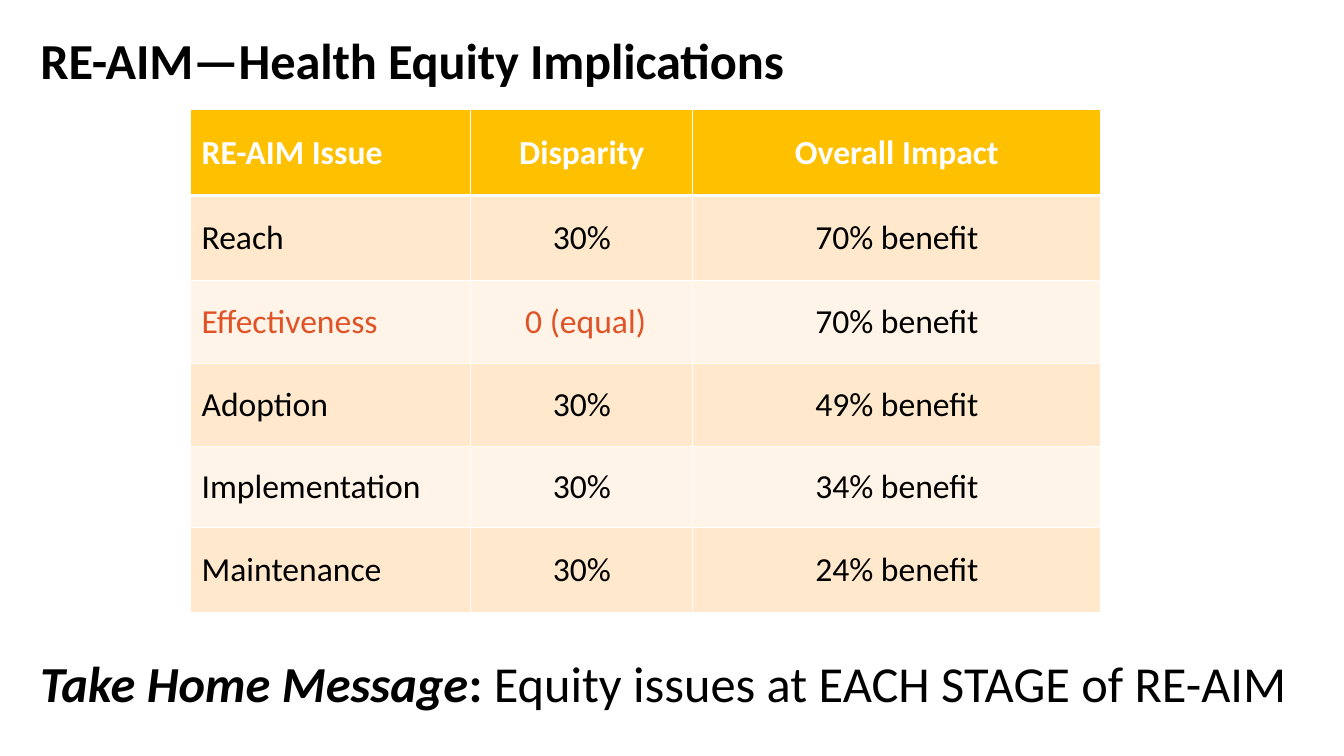
from dataclasses import dataclass

from pptx import Presentation
from pptx import util as u
from pptx.dml.color import RGBColor
from pptx.enum import text as t
from pptx.oxml import parse_xml
from pptx.oxml.ns import nsdecls


@dataclass(frozen=True)
class Theme:
    font: str = "Calibri"
    heading_size: int = 36
    table_size: int = 24
    ink: str = "000000"
    white: str = "FFFFFF"
    accent: str = "DF5327"
    header: str = "FFC000"
    bands: tuple = ("FFE8CC", "FFF4E7")
    border: int = 1
    header_border: int = 3


def add_text(paragraph, content, *, font, size, color, bold=False, italic=False, spacing=None):
    run = paragraph.add_run()
    run.text = content
    run.font.name = font
    run.font.size = u.Pt(size)
    run.font.bold = bold
    run.font.italic = italic
    run.font.color.rgb = RGBColor.from_string(color)
    if spacing is not None:
        run.font._element.set("spc", str(round(spacing * 100)))


class SlideBuilder:
    def __init__(self, slide, theme):
        self.slide = slide
        self.theme = theme

    def title(self, content, box):
        heading = self.slide.shapes.title
        heading.left, heading.top, heading.width, heading.height = map(u.Inches, box)
        frame = heading.text_frame
        frame.word_wrap = True
        frame.auto_size = t.MSO_AUTO_SIZE.NONE
        frame.vertical_anchor = t.MSO_ANCHOR.MIDDLE
        paragraph = frame.paragraphs[0]
        paragraph.alignment = t.PP_ALIGN.LEFT
        paragraph.line_spacing = 0.9
        add_text(paragraph, content, font=self.theme.font, size=self.theme.heading_size,
                 color=self.theme.ink, bold=True, spacing=-0.1)

    def message(self, parts, box):
        frame = self.slide.shapes.add_textbox(*map(u.Inches, box)).text_frame
        frame.word_wrap = True
        frame.auto_size = t.MSO_AUTO_SIZE.SHAPE_TO_FIT_TEXT
        for content, style in parts:
            add_text(frame.paragraphs[0], content, font=self.theme.font,
                     size=self.theme.heading_size, color=self.theme.ink, **style)

    def borders(self, cell, is_header):
        properties = cell._tc.get_or_add_tcPr()
        for index, side in enumerate("LRTB"):
            thick = is_header and side == "B"
            width = u.Pt(self.theme.header_border if thick else self.theme.border)
            properties.insert(index, parse_xml(
                f'<a:ln{side} {nsdecls("a")} w="{width}"><a:solidFill>'
                f'<a:srgbClr val="{self.theme.white}"/></a:solidFill></a:ln{side}>'))

    def cell(self, cell, content, row, column, highlighted):
        theme = self.theme
        is_header = row == 0
        cell.fill.solid()
        fill = theme.header if is_header else theme.bands[(row - 1) % 2]
        cell.fill.fore_color.rgb = RGBColor.from_string(fill)
        cell.vertical_anchor = t.MSO_ANCHOR.MIDDLE
        cell.margin_left = cell.margin_right = u.Inches(0.11)
        cell.margin_top = cell.margin_bottom = u.Inches(0.05)
        paragraph = cell.text_frame.paragraphs[0]
        paragraph.alignment = t.PP_ALIGN.CENTER if column else t.PP_ALIGN.LEFT
        color = theme.white if is_header else theme.accent if highlighted else theme.ink
        add_text(paragraph, content, font=theme.font, size=theme.table_size,
                 color=color, bold=is_header)
        self.borders(cell, is_header)

    def table(self, records, box, widths, heights, highlights):
        table = self.slide.shapes.add_table(
            len(records), len(widths), *map(u.Inches, box)).table
        for column, width in zip(table.columns, widths):
            column.width = u.Inches(width)
        for row, height in zip(table.rows, heights):
            row.height = u.Inches(height)
        for row, record in enumerate(records):
            for column, content in enumerate(record):
                self.cell(table.cell(row, column), content, row, column,
                          content in highlights)


def main():
    presentation = Presentation()
    presentation.slide_width = u.Inches(13.33)
    presentation.slide_height = u.Inches(7.5)
    slide = presentation.slides.add_slide(presentation.slide_layouts[5])
    builder = SlideBuilder(slide, Theme())

    builder.title("RE-AIM—Health Equity Implications", (0.3, 0.17, 8.44, 0.92))
    equity_impacts = [
        ("RE-AIM Issue", "Disparity", "Overall Impact"),
        ("Reach", "30%", "70% benefit"),
        ("Effectiveness", " 0 (equal)", "70% benefit"),
        ("Adoption", "30%", "49% benefit"),
        ("Implementation", "30%", "34% benefit"),
        ("Maintenance", "30%", "24% benefit"),
    ]
    builder.table(equity_impacts, (1.89, 1.09, 9.03, 5),
                  widths=(2.78, 2.2, 4.05),
                  heights=(0.85, 0.84, 0.83, 0.82, 0.8, 0.85),
                  highlights=("Effectiveness", " 0 (equal)"))
    builder.message([
        ("Take Home Message", {"bold": True, "italic": True}),
        (": ", {"bold": True}),
        ("Equity issues at EACH STAGE of RE-AIM", {}),
    ], (0.3, 6.42, 12.72, 0.71))
    presentation.save("out.pptx")


if __name__ == "__main__":
    main()
